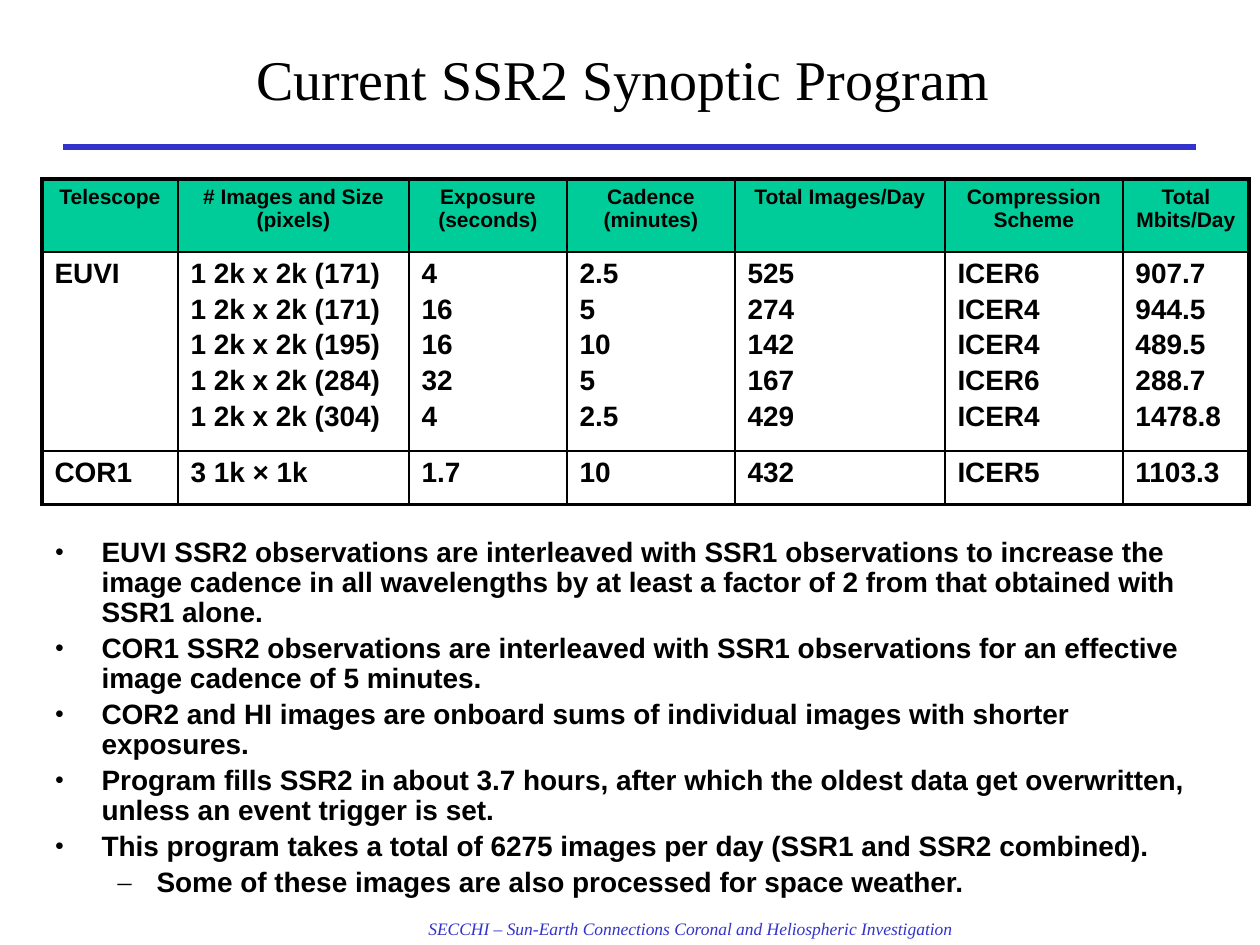
import dataclasses

import lxml.etree
import pptx
import pptx.dml.color
import pptx.enum.shapes
import pptx.enum.text
import pptx.oxml
import pptx.oxml.ns
import pptx.util


@dataclasses.dataclass(frozen=True)
class Theme:
    ink: str = "000000"
    accent: str = "3333CC"
    header: str = "00CC99"
    serif: str = "Times New Roman"
    sans: str = "Arial"
    title_size: int = 32
    text_size: int = 16
    header_size: int = 12
    footer_size: int = 10
    rule: float = 3
    frame: float = 2.25
    grid: float = 1
    cell_gap: float = 2.6
    list_gap: float = 3.2


def px(length):
    return pptx.util.Emu(round(length * 914400 / 126))


def rgb(value):
    return pptx.dml.color.RGBColor.from_string(value)


def add_xml(parent, tag, **attributes):
    child = lxml.etree.SubElement(parent, pptx.oxml.ns.qn(tag))
    for key, value in attributes.items():
        child.set(key, str(value))
    return child


class SlideBuilder:
    def __init__(self, slide, theme):
        self.slide = slide
        self.theme = theme

    def place(self, shape, left, top, width, height):
        shape.left, shape.top = px(left), px(top)
        shape.width, shape.height = px(width), px(height)

    def style(self, paragraph, font, size, color, bold=False, italic=False):
        for run in paragraph.runs:
            run.font.name = font
            run.font.size = pptx.util.Pt(size)
            run.font.color.rgb = rgb(color)
            run.font.bold = bold
            run.font.italic = italic

    def title(self, text, *box):
        heading = self.slide.shapes.title
        self.place(heading, *box)
        frame = heading.text_frame
        frame.text = text
        frame.vertical_anchor = pptx.enum.text.MSO_ANCHOR.TOP
        frame.auto_size = pptx.enum.text.MSO_AUTO_SIZE.NONE
        frame.paragraphs[0].alignment = pptx.enum.text.PP_ALIGN.CENTER
        self.style(frame.paragraphs[0], self.theme.serif,
                   self.theme.title_size, self.theme.ink)

    def rule(self, left, top, right):
        line = self.slide.shapes.add_connector(
            pptx.enum.shapes.MSO_CONNECTOR.STRAIGHT,
            px(left), px(top), px(right), px(top))
        line.line.color.rgb = rgb(self.theme.accent)
        line.line.width = pptx.util.Pt(self.theme.rule)
        add_xml(line._element.spPr, "a:effectLst")

    def footer(self, text, *box):
        caption = self.slide.shapes.add_textbox(*map(px, box))
        frame = caption.text_frame
        frame.text = text
        frame.word_wrap = False
        frame.auto_size = pptx.enum.text.MSO_AUTO_SIZE.SHAPE_TO_FIT_TEXT
        self.style(frame.paragraphs[0], self.theme.serif,
                   self.theme.footer_size, self.theme.accent, italic=True)

    def borders(self, cell, outer):
        properties = cell._tc.get_or_add_tcPr()
        for side in ("L", "R", "T", "B"):
            width = self.theme.frame if side in outer else self.theme.grid
            edge = add_xml(properties, f"a:ln{side}", w=pptx.util.Pt(width))
            add_xml(add_xml(edge, "a:solidFill"), "a:srgbClr", val=self.theme.ink)

    def table(self, rows, left, top, widths, heights):
        grid = self.slide.shapes.add_table(
            len(rows), len(widths), px(left), px(top),
            px(sum(widths)), px(sum(heights))).table
        grid.first_row = grid.horz_banding = False
        for column, width in zip(grid.columns, widths):
            column.width = px(width)
        for row, height in zip(grid.rows, heights):
            row.height = px(height)
        last_row, last_column = len(rows) - 1, len(widths) - 1
        for r, row in enumerate(rows):
            for c, text in enumerate(row):
                cell = grid.cell(r, c)
                outer = (("L" if c == 0 else "") + ("R" if c == last_column else "")
                         + ("T" if r == 0 else "") + ("B" if r == last_row else ""))
                self.borders(cell, outer)
                self.fill_cell(cell, text, is_header=r == 0)

    def fill_cell(self, cell, text, is_header):
        cell.text_frame.text = text
        if is_header:
            cell.fill.solid()
            cell.fill.fore_color.rgb = rgb(self.theme.header)
        else:
            cell.fill.background()
        size = self.theme.header_size if is_header else self.theme.text_size
        for index, paragraph in enumerate(cell.text_frame.paragraphs):
            if is_header:
                paragraph.alignment = pptx.enum.text.PP_ALIGN.CENTER
            if index:
                paragraph.space_before = pptx.util.Pt(self.theme.cell_gap)
            self.style(paragraph, self.theme.sans, size, self.theme.ink, bold=True)

    def bullets(self, items, *box):
        notes = self.slide.placeholders[1]
        self.place(notes, *box)
        frame = notes.text_frame
        frame.text = "\n".join(text for level, text in items)
        frame.auto_size = pptx.enum.text.MSO_AUTO_SIZE.NONE
        levels = (("•", 47, 47), ("–", 102, 39))
        for index, (paragraph, (level, text)) in enumerate(zip(frame.paragraphs, items)):
            mark, margin, hanging = levels[level]
            paragraph.level = level
            paragraph.line_spacing = 0.9
            paragraph.space_before = pptx.util.Pt(self.theme.list_gap if index else 0)
            properties = paragraph._p.get_or_add_pPr()
            properties.set("marL", str(px(margin)))
            properties.set("indent", str(-px(hanging)))
            add_xml(properties, "a:buFont", typeface=self.theme.serif)
            add_xml(properties, "a:buChar", char=mark)
            self.style(paragraph, self.theme.sans, self.theme.text_size,
                       self.theme.ink, bold=True)


PROGRAM = [
    ["Telescope", "# Images and Size (pixels)", "Exposure (seconds)",
     "Cadence (minutes)", "Total Images/Day", "Compression Scheme", "Total Mbits/Day"],
    ["EUVI",
     "1 2k x 2k (171)\n1 2k x 2k (171)\n1 2k x 2k (195)\n1 2k x 2k (284)\n1 2k x 2k (304)",
     "4\n16\n16\n32\n4", "2.5\n5\n10\n5\n2.5", "525\n274\n142\n167\n429",
     "ICER6\nICER4\nICER4\nICER6\nICER4", "907.7\n944.5\n489.5\n288.7\n1478.8"],
    ["COR1", "3 1k × 1k", "1.7", "10", "432", "ICER5", "1103.3"],
]

REMARKS = [
    (0, "EUVI SSR2 observations are interleaved with SSR1 observations to increase the "
        "image cadence in all wavelengths by at least a factor of 2 from that obtained "
        "with SSR1 alone."),
    (0, "COR1 SSR2 observations are interleaved with SSR1 observations for an effective "
        "image cadence of 5 minutes."),
    (0, "COR2 and HI images are onboard sums of individual images with shorter exposures."),
    (0, "Program fills SSR2 in about 3.7 hours, after which the oldest data get "
        "overwritten, unless an event trigger is set."),
    (0, "This program takes a total of 6275 images per day (SSR1 and SSR2 combined)."),
    (1, "Some of these images are also processed for space weather."),
]


def main():
    deck = pptx.Presentation()
    deck.slide_width, deck.slide_height = px(1260), px(945)
    builder = SlideBuilder(deck.slides.add_slide(deck.slide_layouts[1]), Theme())
    builder.footer("SECCHI – Sun-Earth Connections Coronal and Heliospheric Investigation",
                   416, 912, 552, 33)
    builder.rule(63, 147, 1196)
    builder.title("Current SSR2 Synoptic Program ", 63, 38, 1134, 158)
    builder.table(PROGRAM, 42, 179, [136, 231, 158, 168, 210, 178, 126], [73, 190, 54])
    builder.bullets(REMARKS, 42, 532, 1176, 388)
    deck.save("out.pptx")


if __name__ == "__main__":
    main()
